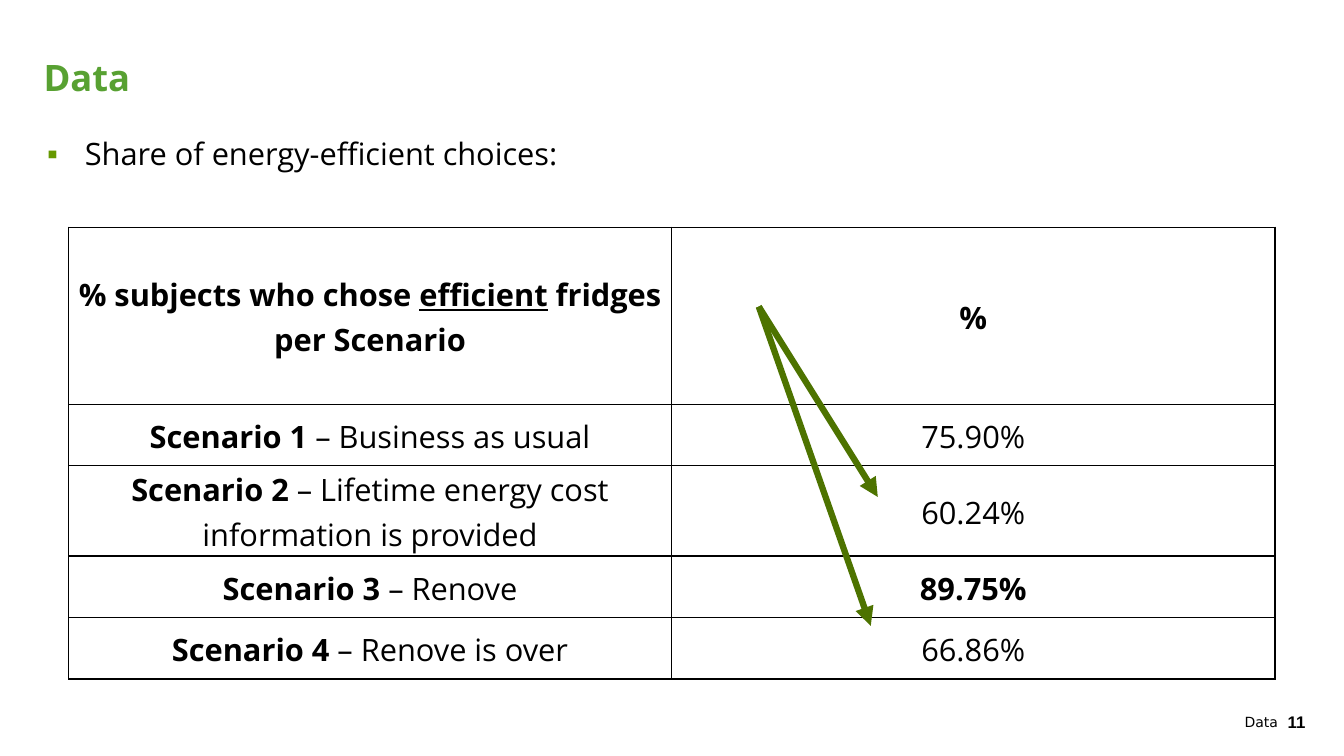
from lxml import etree
from pptx import Presentation
from pptx import util as u
from pptx.dml.color import RGBColor
from pptx.enum import shapes, text
from pptx.oxml import ns

Pt = u.Pt
BLACK, WHITE, GREEN = "000000", "FFFFFF", "58A132"
LEAF, MOSS = "669900", "4D7300"


def color(code):
    return RGBColor.from_string(code)


def add(node, tag, **attrs):
    return etree.SubElement(node, ns.qn(tag), **attrs)


class Deck:
    face = "Open Sans"
    size = 22

    def __init__(self, width, height):
        self.file = Presentation()
        self.file.slide_width, self.file.slide_height = Pt(width), Pt(height)
        self.slide = self.file.slides.add_slide(self.file.slide_layouts[6])

    def style(self, font, size=None, face=None, code=BLACK, bold=None):
        font.size, font.name = Pt(size or self.size), face or self.face
        font.color.rgb, font.bold = color(code), bold

    def label(self, words, left, top, width, height, right=False,
              middle=True, bullet=None, **look):
        box = self.slide.shapes.add_textbox(Pt(left), Pt(top), Pt(width), Pt(height))
        frame = box.text_frame
        frame.word_wrap = True
        frame.vertical_anchor = text.MSO_ANCHOR.MIDDLE if middle else text.MSO_ANCHOR.TOP
        para = frame.paragraphs[0]
        para.text = words
        if right:
            para.alignment = text.PP_ALIGN.RIGHT
        if bullet:
            props = para._p.get_or_add_pPr()
            props.set("marL", str(Pt(27)))
            props.set("indent", str(-Pt(27)))
            add(add(props, "a:buClr"), "a:srgbClr", val=LEAF)
            add(props, "a:buFont", typeface="Arial")
            add(props, "a:buChar", char=bullet)
        self.style(para.font, **look)

    def cell(self, cell, runs):
        cell.margin_left = cell.margin_right = Pt(5)
        cell.margin_top = cell.margin_bottom = 0
        cell.vertical_anchor = text.MSO_ANCHOR.MIDDLE
        para = cell.text_frame.paragraphs[0]
        para.alignment, para.line_spacing = text.PP_ALIGN.CENTER, 1.07
        self.style(para.font)
        for words, marks in runs:
            run = para.add_run()
            run.text = words
            run.font.bold = "b" in marks
            run.font.underline = "u" in marks
        # Borders come before the fill in the cell properties
        props = cell._tc.get_or_add_tcPr()
        for side in ("a:lnL", "a:lnR", "a:lnT", "a:lnB"):
            line = add(props, side, w=str(Pt(1)))
            add(add(line, "a:solidFill"), "a:srgbClr", val=BLACK)
        cell.fill.solid()
        cell.fill.fore_color.rgb = color(WHITE)

    def table(self, rows, left, top, widths, heights):
        grid = self.slide.shapes.add_table(
            len(rows), len(widths), Pt(left), Pt(top),
            Pt(sum(widths)), Pt(sum(heights))).table
        grid.first_row = grid.horz_banding = False
        for col, width in zip(grid.columns, widths):
            col.width = Pt(width)
        for r, (row, height) in enumerate(zip(rows, heights)):
            grid.rows[r].height = Pt(height)
            for c, runs in enumerate(row):
                self.cell(grid.cell(r, c), runs)

    def arrow(self, start, end):
        line = self.slide.shapes.add_connector(
            shapes.MSO_CONNECTOR.STRAIGHT, *map(Pt, start + end))
        line.line.color.rgb, line.line.width = color(MOSS), Pt(4.5)
        add(line.line._get_or_add_ln(), "a:tailEnd", type="triangle")
        add(line._element.spPr, "a:effectLst")


def main():
    deck = Deck(960, 540)

    # Title and lead line
    deck.label("Data", 24, 23.5, 912, 63, size=26, code=GREEN, bold=True)
    deck.label("Share of energy-efficient choices:", 26.5, 93, 912, 330,
               middle=False, bullet="▪")

    # Footer
    deck.label("11", 871, 497, 68.5, 37, right=True, size=12, face="Arial", bold=True)
    deck.label("Data", 9.5, 497, 910.5, 37, right=True, size=10, face="DejaVu Sans")

    # Shares by scenario
    head = [[("% subjects who chose ", "b"), ("efficient", "bu"),
             (" fridges per Scenario", "b")], [("%", "b")]]
    shares = [("Business as usual", "75.90%", ""),
              ("Lifetime energy cost information is provided", "60.24%", ""),
              ("Renove", "89.75%", "b"),
              ("Renove is over", "66.86%", "")]
    rows = [[[(f"Scenario {n} ", "b"), (f"– {name}", "")], [(share, mark)]]
            for n, (name, share, mark) in enumerate(shares, 1)]
    deck.table([head] + rows, 49, 162.3, [430.6, 431.2], [126.5, 44, 64.3, 44, 44])

    # Arrows to the scenarios
    for end in ((627, 355), (622, 447)):
        deck.arrow((542, 219), end)

    deck.file.save("out.pptx")


if __name__ == "__main__":
    main()
